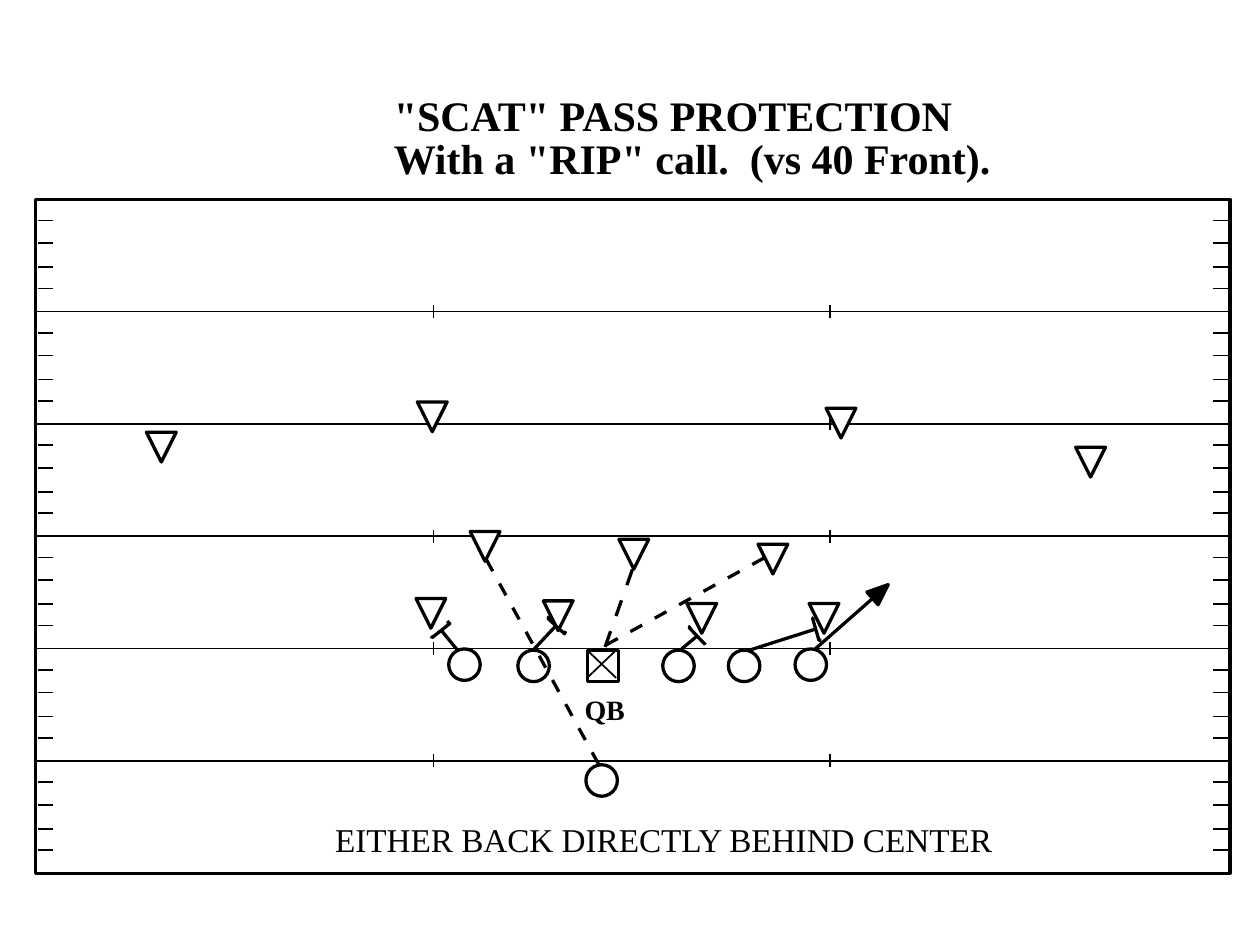
"""Build a football diagram slide showing the "SCAT" pass protection."""
from lxml.etree import SubElement
from pptx import Presentation
from pptx.dml.color import RGBColor
from pptx.enum.shapes import MSO_CONNECTOR as Line, MSO_SHAPE as Shape
from pptx.enum.text import MSO_ANCHOR as Anchor, MSO_AUTO_SIZE as Fit, PP_ALIGN as Align
from pptx.oxml.ns import qn
from pptx.util import Pt

THEME = {
    "ink": RGBColor(0, 0, 0),
    "paper": RGBColor(255, 255, 255),
    "font": "Times New Roman",
    "title": 24, "caption": 19, "label": 16,
    "thin": 1, "thick": 1.88,
}

TITLE = ('"SCAT" PASS PROTECTION', (225, 51.2, 347, 28))
SUBTITLE = ('With a "RIP" call.  (vs 40 Front).', (225, 75.8, 347, 28))
CAPTION = ("EITHER BACK DIRECTLY BEHIND CENTER", (191.5, 468, 379.5, 23))
QUARTERBACK = ("QB", (334, 396, 29.5, 21.6))

FIELD = {"left": 20.2, "top": 113.8, "width": 682.6, "height": 385.2}
BANDS = 6
TICK_OFFSETS = (12.2, 25.2, 38.8, 51.1)
TICK_COLUMNS = ((21.6, 30.2), (693.4, 702))
HASH_COLUMNS = (247.7, 474.5)
HASH_REACH = 3.7

PLAYER_SIZE = 18
DEFENDER_SIZE = 17
CENTER = (344.5, 380.5)
CENTER_CROSS = (335.5, 371.5, 352.1, 387.4)
OFFENSE = [(265.4, 379.8), (304.9, 380.5), (387.7, 380.5),
           (425.2, 380.5), (463.3, 379.8), (343.8, 446)]
DEFENSE = [(470.9, 344.9), (401, 344.9), (246.2, 342), (319, 343.4),
           (441.7, 311), (362.2, 308.2), (277.2, 303.8),
           (480.6, 233.3), (247, 229.7), (623.2, 255.6), (92.2, 247)]

BLOCKS = [
    ((428.4, 371.5, 466.6, 359.3),
     [(469.4, 365.8), (468, 365.8), (464.4, 353.5), (465.1, 352.8)]),
    ((389.5, 370.8, 398.2, 363.6),
     [(403.2, 367.2), (402.5, 367.9), (393.8, 358.6), (394.6, 357.8)]),
    ((261.4, 371.5, 252, 360),
     [(255.6, 355), (257, 356.4), (247, 364.3), (246.2, 363.6)]),
    ((305.3, 370.8, 317.5, 357.8),
     [(323.3, 360.7), (322.6, 362.2), (313.2, 353.5), (313.9, 352.1)]),
]
READS = [((277.9, 319.7, 342.7, 437.8), 4.1, 4.3),
         ((346.3, 368.6, 437.8, 318.2), 4.1, 4.4),
         ((361.4, 325.4, 345.6, 370.1), 5.1, 4.9)]
RELEASE = (465.1, 371.5, 507.6, 334.1)
RELEASE_HEAD = [(507.6, 334.1), (495.4, 338.4), (501.8, 345.6)]


def set_all(target, values):
    for name, value in values.items():
        setattr(target, name, value)


def write(shape, text, box, size, bold=False, anchor=Anchor.TOP, wrap=False):
    set_all(shape, dict(zip(("left", "top", "width", "height"), map(Pt, box))))
    frame = shape.text_frame
    set_all(frame, {"margin_left": 0, "margin_top": 0, "margin_right": 0, "margin_bottom": 0,
                    "word_wrap": wrap, "auto_size": Fit.NONE, "vertical_anchor": anchor})
    paragraph = frame.paragraphs[0]
    set_all(paragraph, {"alignment": Align.LEFT, "space_before": Pt(0), "line_spacing": 1.0})
    run = paragraph.add_run()
    run.text = text
    set_all(run.font, {"name": THEME["font"], "size": Pt(THEME[size]), "bold": bold})
    run.font.color.rgb = THEME["ink"]


def paint(shape, fill=None):
    shape.shadow.inherit = False
    if fill:
        shape.fill.solid()
        shape.fill.fore_color.rgb = THEME[fill]
    else:
        shape.fill.background()
    shape.line.color.rgb = THEME["ink"]
    shape.line.width = Pt(THEME["thick"])


def draw_line(shapes, ends, weight="thin", dash=None):
    connector = shapes.add_connector(Line.STRAIGHT, *map(Pt, ends))
    connector.line.color.rgb = THEME["ink"]
    connector.line.width = Pt(THEME[weight])
    properties = connector._element.spPr
    if dash:
        pattern = SubElement(properties.find(qn("a:ln")), qn("a:custDash"))
        on, off = (str(round(part * 100000)) for part in dash)
        SubElement(pattern, qn("a:ds"), d=on, sp=off)
    SubElement(properties, qn("a:effectLst"))


def draw_outline(shapes, points, fill=None, close=True):
    start, *rest = [(Pt(x), Pt(y)) for x, y in points]
    builder = shapes.build_freeform(*start)
    builder.add_line_segments(rest, close=close)
    paint(builder.convert_to_shape(), fill)


def draw_player(shapes, kind, middle):
    x, y = (value - PLAYER_SIZE / 2 for value in middle)
    paint(shapes.add_shape(kind, *map(Pt, (x, y, PLAYER_SIZE, PLAYER_SIZE))), "paper")


def draw_field(shapes):
    left, top, width, height = FIELD.values()
    band_height = height / BANDS
    for band in range(BANDS):
        band_top = top + band * band_height
        for offset in TICK_OFFSETS:
            y = band_top + offset
            for start, end in TICK_COLUMNS:
                draw_line(shapes, (start, y, end, y))
        if band:
            draw_line(shapes, (left, band_top, left + width, band_top))
            for x in HASH_COLUMNS:
                draw_line(shapes, (x, band_top - HASH_REACH, x, band_top + HASH_REACH))
    paint(shapes.add_shape(Shape.RECTANGLE, *map(Pt, FIELD.values())))


def draw_players(shapes):
    for middle in OFFENSE:
        draw_player(shapes, Shape.OVAL, middle)
    draw_player(shapes, Shape.RECTANGLE, CENTER)
    left, top, right, bottom = CENTER_CROSS
    draw_line(shapes, (left, top, right, bottom))
    draw_line(shapes, (left, bottom, right, top))
    half = DEFENDER_SIZE / 2
    for x, y in DEFENSE:
        draw_outline(shapes, [(x - half, y), (x + half, y), (x, y + DEFENDER_SIZE)], "paper")


def draw_assignments(shapes):
    for path_ends, bar in BLOCKS:
        draw_line(shapes, path_ends, "thick")
        draw_outline(shapes, bar, close=False)
    for sight_line, on, off in READS:
        draw_line(shapes, sight_line, "thick", (on, off))
    draw_line(shapes, RELEASE, "thick")
    draw_outline(shapes, RELEASE_HEAD, "ink")


def main():
    deck = Presentation()
    set_all(deck, {"slide_width": Pt(720), "slide_height": Pt(540)})
    slide = deck.slides.add_slide(deck.slide_layouts[0])
    shapes = slide.shapes
    draw_field(shapes)
    write(shapes.title, *TITLE, "title", bold=True, wrap=True)
    write(slide.placeholders[1], *SUBTITLE, "title", bold=True, wrap=True)
    draw_players(shapes)
    for (text, box), size, bold in ((CAPTION, "caption", False), (QUARTERBACK, "label", True)):
        write(shapes.add_textbox(*map(Pt, box)), text, box, size, bold)
    draw_assignments(shapes)
    deck.save("out.pptx")


if __name__ == "__main__":
    main()
